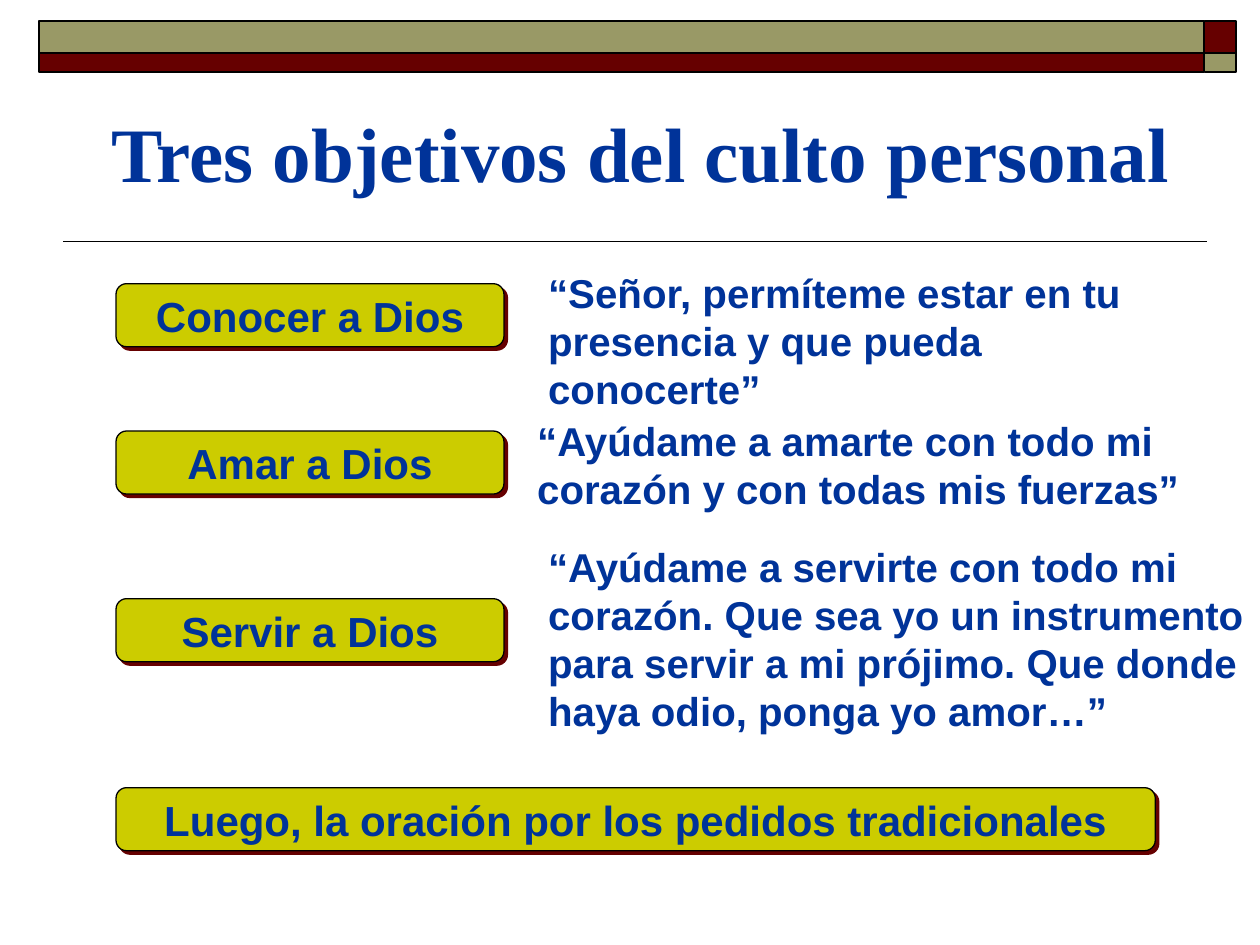
from lxml.etree import SubElement
from pptx import Presentation
from pptx.dml.color import RGBColor
from pptx.enum.shapes import MSO_CONNECTOR, MSO_SHAPE
from pptx.enum.text import MSO_ANCHOR, MSO_AUTO_SIZE, PP_ALIGN
from pptx.oxml.ns import qn
from pptx.util import Cm, Pt

BLUE = RGBColor(0x00, 0x33, 0x99)
GOLD = RGBColor(0xCC, 0xCC, 0x00)
WINE = RGBColor(0x66, 0x00, 0x00)
OLIVE = RGBColor(0x99, 0x99, 0x66)
BLACK = RGBColor(0, 0, 0)

TITLE = "Tres objetivos del culto personal"
# label, top, width (cm)
GOALS = [
    ("Conocer a Dios", 5.72, 7.82),
    ("Amar a Dios", 8.69, 7.82),
    ("Servir a Dios", 12.07, 7.82),
    ("Luego, la oración por los pedidos tradicionales", 15.88, 20.95),
]
# text, left, top, width, height (cm)
PRAYERS = [
    ("“Señor, permíteme estar en tu presencia y que pueda conocerte”",
     10.8, 5.28, 13.6, 2.24),
    ("“Ayúdame a amarte con todo mi corazón y con todas mis fuerzas”",
     10.58, 8.26, 15.24, 2.24),
    ("“Ayúdame a servirte con todo mi corazón. Que sea yo un instrumento "
     "para servir a mi prójimo. Que donde haya odio, ponga yo amor…”",
     10.8, 10.8, 14.6, 4.19),
]
# left, width and top, height of the header band's cells (cm)
COLS = [(0.79, 23.49), (24.28, 0.64)]
ROWS = [(0.43, 0.64), (1.07, 0.38)]
GOAL_LEFT, GOAL_HIGH = 2.34, 1.27


def write(frame, text, size, font="Arial", align=PP_ALIGN.LEFT):
    frame.text = text
    para = frame.paragraphs[0]
    para.alignment = align
    face = para.runs[0].font
    face.name, face.size, face.bold = font, Pt(size), True
    face.color.rgb = BLUE


def add_box(slide, kind, place, fill, line):
    box = slide.shapes.add_shape(kind, *map(Cm, place))
    box.shadow.inherit = False
    box.fill.solid()
    box.fill.fore_color.rgb = fill
    box.line.color.rgb = BLACK
    box.line.width = Pt(line)
    return box


def add_shade(box):
    """Give the box a hard wine shadow towards the lower right."""
    effects = box._element.spPr.find(qn("a:effectLst"))
    shade = SubElement(effects, qn("a:outerShdw"), blurRad="0",
                       dist=str(Pt(2.8)), dir="2700000", algn="ctr",
                       rotWithShape="0")
    SubElement(shade, qn("a:srgbClr"), val=str(WINE))


def add_header(slide):
    for r, (top, high) in enumerate(ROWS):
        for c, (left, wide) in enumerate(COLS):
            fill = WINE if (r + c) % 2 else OLIVE
            add_box(slide, MSO_SHAPE.RECTANGLE, (left, top, wide, high), fill, 1)
    rule = slide.shapes.add_connector(
        MSO_CONNECTOR.STRAIGHT, Cm(24.33), Cm(4.87), Cm(1.27), Cm(4.87))
    rule.line.color.rgb = BLACK
    rule.line.width = Pt(1)
    SubElement(rule._element.spPr, qn("a:effectLst"))


def add_title(slide):
    title = slide.shapes.title
    title.left, title.top = Cm(1.27), Cm(1.47)
    title.width, title.height = Cm(23.29), Cm(3.18)
    title.text_frame.vertical_anchor = MSO_ANCHOR.MIDDLE
    write(title.text_frame, TITLE, 44, "Times New Roman", PP_ALIGN.CENTER)


def add_goal(slide, text, top, wide):
    goal = add_box(slide, MSO_SHAPE.ROUNDED_RECTANGLE,
                   (GOAL_LEFT, top, wide, GOAL_HIGH), GOLD, 0.75)
    add_shade(goal)
    frame = goal.text_frame
    frame.word_wrap = False
    frame.vertical_anchor = MSO_ANCHOR.MIDDLE
    write(frame, text, 24, align=PP_ALIGN.CENTER)


def add_prayer(slide, text, *place):
    frame = slide.shapes.add_textbox(*map(Cm, place)).text_frame
    frame.word_wrap = True
    frame.auto_size = MSO_AUTO_SIZE.SHAPE_TO_FIT_TEXT
    write(frame, text, 23)


def main():
    deck = Presentation()
    deck.slide_width, deck.slide_height = Cm(25.4), Cm(19.05)
    slide = deck.slides.add_slide(deck.slide_layouts[5])
    add_header(slide)
    add_title(slide)
    for goal in GOALS:
        add_goal(slide, *goal)
    for prayer in PRAYERS:
        add_prayer(slide, *prayer)
    deck.save("out.pptx")


if __name__ == "__main__":
    main()
